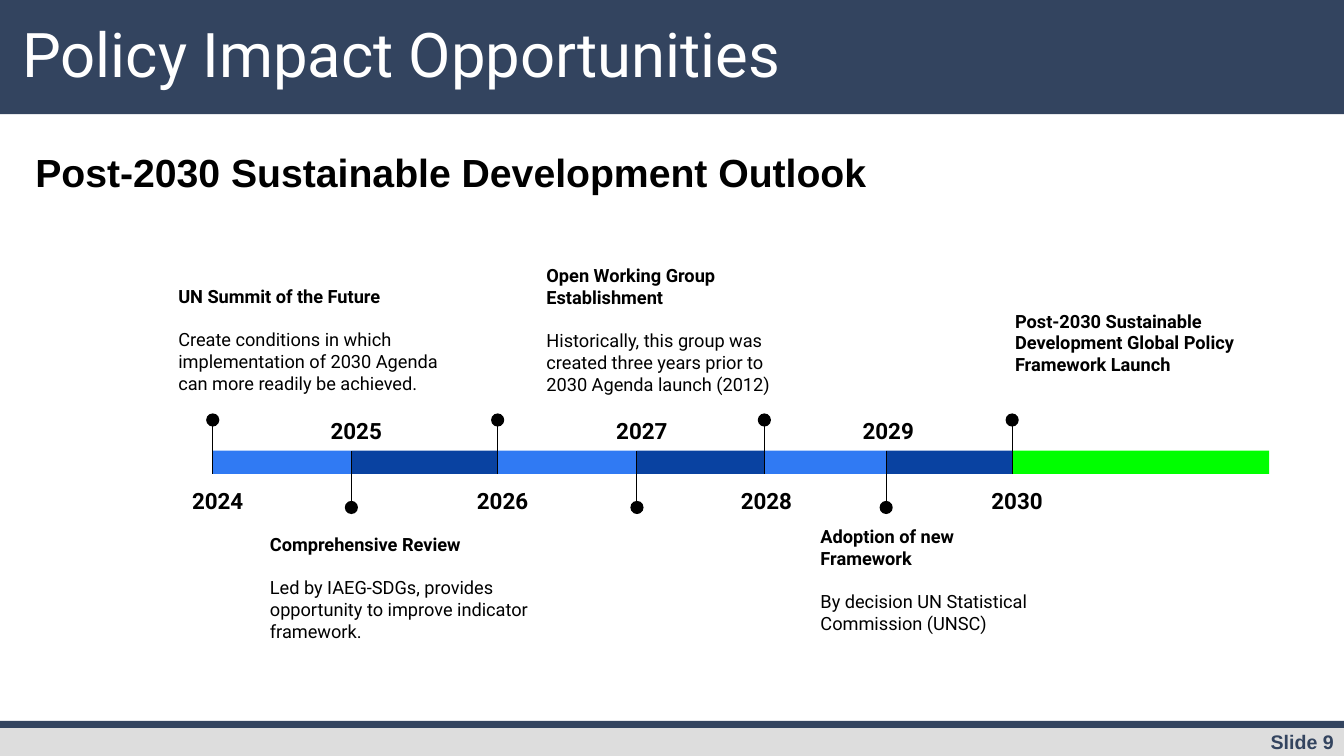
from dataclasses import dataclass

import pptx
import pptx.dml.color
import pptx.enum.shapes
import pptx.enum.text
import pptx.oxml.ns
import pptx.util
from lxml import etree

Pt = pptx.util.Pt
MSO_SHAPE = pptx.enum.shapes.MSO_SHAPE
ALIGN = pptx.enum.text.PP_ALIGN
ANCHOR = pptx.enum.text.MSO_ANCHOR


@dataclass(frozen=True)
class Theme:
    navy: str = "33445F"
    grey: str = "DDDDDD"
    light_blue: str = "307AF3"
    dark_blue: str = "0942A1"
    green: str = "00FF00"
    black: str = "000000"
    white: str = "FFFFFF"
    display: str = "Roboto"
    plain: str = "Arial"
    title_size: float = 44
    subtitle_size: float = 28
    year_size: float = 16
    footer_size: float = 14
    note_size: float = 13


@dataclass(frozen=True)
class Milestone:
    """Offsets are from the milestone's point on the top edge of the bar."""
    year: str
    x: float
    above: bool
    year_shift: float = 3.5
    note_box: tuple = ()
    heading: str = ""
    detail: str = ""


THEME = Theme()
SLIDE_WIDTH, SLIDE_HEIGHT = 960, 540
MILESTONES = [
    Milestone("2024", 0, True, note_box=(-34, -127.6, 210), heading="UN Summit of the Future",
              detail="Create conditions in which implementation of 2030 Agenda "
                     "can more readily be achieved."),
    Milestone("2025", 99, False, note_box=(-67.5, 49.5, 205), heading="Comprehensive Review",
              detail="Led by IAEG-SDGs, provides opportunity to improve indicator framework."),
    Milestone("2026", 203.5, True),
    Milestone("2027", 303, False),
    Milestone("2028", 394, True, 1.5, (-165, -142.7, 188), "Open Working Group Establishment",
              "Historically, this group was created three years prior to "
              "2030 Agenda launch (2012)"),
    Milestone("2029", 481, False, 1.5, (-56.3, 43.8, 176.5), "Adoption of new Framework",
              "By decision UN Statistical Commission (UNSC)"),
    Milestone("2030", 571, True, note_box=(-7.3, -110, 176.5),
              heading="Post-2030 Sustainable Development Global Policy Framework Launch"),
]


def rgb(color):
    return pptx.dml.color.RGBColor.from_string(color)


def set_frame(frame, inset_x, inset_y, anchor=ANCHOR.TOP):
    frame.word_wrap = True
    frame.auto_size = pptx.enum.text.MSO_AUTO_SIZE.NONE
    frame.vertical_anchor = anchor
    frame.margin_left = frame.margin_right = Pt(inset_x)
    frame.margin_top = frame.margin_bottom = Pt(inset_y)


def write(frame, text, *, size, color=THEME.black, font=THEME.display, bold=False,
          align=ALIGN.LEFT, line_spacing=1.0, after=0):
    """Fill the frame's empty first paragraph, or add one after its text."""
    paragraph = frame.add_paragraph() if frame.text else frame.paragraphs[0]
    properties = paragraph._p.get_or_add_pPr()
    properties.set("marL", "0")
    properties.set("indent", "0")
    etree.SubElement(properties, pptx.oxml.ns.qn("a:buNone"))
    paragraph.alignment = align
    paragraph.line_spacing = line_spacing
    paragraph.space_before = Pt(0)
    paragraph.space_after = Pt(after)
    run = paragraph.add_run()
    run.text = text
    run.font.name, run.font.size, run.font.bold = font, Pt(size), bold
    run.font.color.rgb = rgb(color)


def add_filled(slide, kind, left, top, width, height, color):
    shape = slide.shapes.add_shape(kind, Pt(left), Pt(top), Pt(width), Pt(height))
    shape.shadow.inherit = False
    shape.fill.solid()
    shape.fill.fore_color.rgb = rgb(color)
    shape.line.fill.background()
    return shape


def add_frame(slide, left, top, width, height, inset_x, inset_y):
    box = slide.shapes.add_textbox(Pt(left), Pt(top), Pt(width), Pt(height))
    set_frame(box.text_frame, inset_x, inset_y)
    return box.text_frame


def place(shape, left, top, width, height):
    shape.left, shape.top, shape.width, shape.height = map(Pt, (left, top, width, height))


def add_header(slide, left, top, width, height):
    title = slide.shapes.title
    band = add_filled(slide, MSO_SHAPE.RECTANGLE, left, top, width, height, THEME.navy)
    title.element.addprevious(band.element)
    place(title, left + 16, top + 17, width - 107, height - 33)
    set_frame(title.text_frame, 0, 0, ANCHOR.MIDDLE)
    write(title.text_frame, "Policy Impact Opportunities", size=THEME.title_size,
          color=THEME.white, line_spacing=0.9)


def add_subtitle(slide, left, top, width, height):
    body = slide.placeholders[1]
    place(body, left, top, width, height)
    set_frame(body.text_frame, 7.2, 3.6)
    write(body.text_frame, "Post-2030 Sustainable Development Outlook",
          size=THEME.subtitle_size, font=THEME.plain, bold=True, line_spacing=0.9)


def add_footer(slide, left, top, width, height):
    add_filled(slide, MSO_SHAPE.RECTANGLE, left, top + 3, width, height - 3, THEME.grey)
    add_filled(slide, MSO_SHAPE.RECTANGLE, left, top, width, 5, THEME.navy)
    number = add_frame(slide, left + width - 152, top + 3, 152, 24.5, 7.2, 3.6)
    write(number, "Slide 9", size=THEME.footer_size, color=THEME.navy, font=THEME.plain,
          bold=True, align=ALIGN.RIGHT)


def add_marker(slide, x, bar_top, bar_height, above):
    """Pin a dot above or below the bar with a stem crossing the bar."""
    dot = 9.4
    dot_y = bar_top - 22 if above else bar_top + 40.5
    bar_end = bar_top + bar_height if above else bar_top
    stem = slide.shapes.add_connector(pptx.enum.shapes.MSO_CONNECTOR.STRAIGHT,
                                      Pt(x), Pt(dot_y), Pt(x), Pt(bar_end))
    stem.line.color.rgb = rgb(THEME.black)
    stem.line.width = Pt(0.75)
    etree.SubElement(stem.element.spPr, pptx.oxml.ns.qn("a:effectLst"))
    add_filled(slide, MSO_SHAPE.OVAL, x - dot / 2, dot_y - dot / 2, dot, dot, THEME.black)


def add_note(slide, milestone, x, bar_top):
    dx, dy, width = milestone.note_box
    note = add_frame(slide, x + dx, bar_top + dy, width, 99.5, 9.36, 9.36)
    write(note, milestone.heading, size=THEME.note_size, bold=True,
          after=15.25 if milestone.detail else 0)
    if milestone.detail:
        write(note, milestone.detail, size=THEME.note_size)


def add_timeline(slide, left, top, width, height):
    """Draw the bar in the given box, with milestones above and below it."""
    ends = [milestone.x for milestone in MILESTONES[1:]] + [width]
    colors = [THEME.light_blue, THEME.dark_blue] * 3 + [THEME.green]
    for milestone, end, color in zip(MILESTONES, ends, colors):
        add_filled(slide, MSO_SHAPE.RECTANGLE, left + milestone.x, top,
                   end - milestone.x, height, color)
    for milestone in MILESTONES:
        x = left + milestone.x
        add_marker(slide, x, top, height, milestone.above)
        year_top = top + 13.5 if milestone.above else top - 36.5
        year = add_frame(slide, x + milestone.year_shift - 39, year_top, 78, 39, 9.36, 9.36)
        write(year, milestone.year, size=THEME.year_size, bold=True,
              align=ALIGN.CENTER, line_spacing=1.15)
        if milestone.heading:
            add_note(slide, milestone, x, top)


def main():
    deck = pptx.Presentation()
    deck.slide_width, deck.slide_height = Pt(SLIDE_WIDTH), Pt(SLIDE_HEIGHT)
    slide = deck.slides.add_slide(deck.slide_layouts[1])
    add_header(slide, 0, 0, SLIDE_WIDTH, 81.5)
    add_subtitle(slide, 18, 106, 806, 57)
    add_timeline(slide, 152, 322, 754.5, 16.5)
    add_footer(slide, 0, 515, SLIDE_WIDTH, 25)
    deck.save("out.pptx")


if __name__ == "__main__":
    main()
